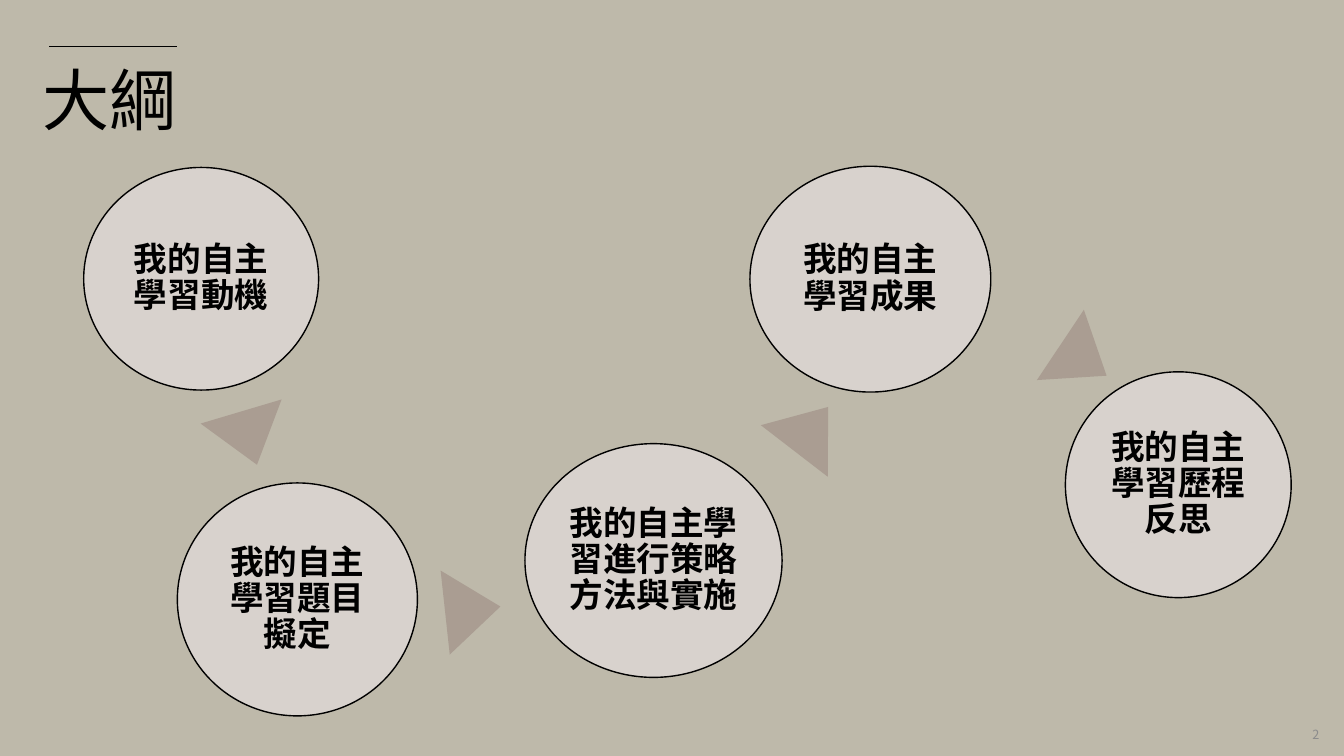
"""Build the outline slide: five topic circles linked by triangle markers."""
from lxml import etree
from pptx import Presentation
from pptx.dml.color import RGBColor
from pptx.enum.shapes import MSO_CONNECTOR, MSO_SHAPE
from pptx.enum.text import MSO_ANCHOR, MSO_AUTO_SIZE, PP_ALIGN
from pptx.oxml.ns import qn
from pptx.util import Cm, Pt

LEFT, CENTER, RIGHT = PP_ALIGN.LEFT, PP_ALIGN.CENTER, PP_ALIGN.RIGHT
TOP, MIDDLE = MSO_ANCHOR.TOP, MSO_ANCHOR.MIDDLE
ELLIPSE, TRIANGLE = MSO_SHAPE.OVAL, MSO_SHAPE.ISOSCELES_TRIANGLE
STRAIGHT = MSO_CONNECTOR.STRAIGHT
NO_AUTOFIT = MSO_AUTO_SIZE.NONE

COLORS = {"background": "BEB9AA", "circle": "D8D2CD", "triangle": "AA9D92",
          "ink": "000000", "number": "8C8C8C"}
TITLE_FONT, TOPIC_FONT = "Noto Sans CJK TC", "Calibri"

TITLE, PAGE_NUMBER = "大綱", "2"
TOPICS = [
    ("我的自主學習動機", (2.11, 4.22, 5.92, 5.61)),
    ("我的自主學習題目擬定", (4.47, 12.17, 6.05, 5.87)),
    ("我的自主學習進行策略方法與實施", (13.23, 11.18, 6.48, 5.89)),
    ("我的自主學習成果", (18.9, 4.19, 6.07, 5.69)),
    ("我的自主學習歷程反思", (26.85, 9.37, 5.69, 5.69)),
]
TRIANGLE_SIZE = (2.13, 1.4)
TRIANGLES = [(5.21, 10.34, 163.4), (10.85, 14.66, 83.8),
             (19.38, 10.11, 37.6), (26.24, 8.38, 123.7)]


def color(name):
    return RGBColor.from_string(COLORS[name])


def write(shape, text, *, font, size, ink="ink", bold=False, align=LEFT,
          anchor=MIDDLE, margins=(0.25, 0.13), spacing=1.0):
    """Put one formatted paragraph into a shape."""
    frame = shape.text_frame
    frame.auto_size = NO_AUTOFIT
    frame.word_wrap = True
    frame.vertical_anchor = anchor
    frame.margin_left = frame.margin_right = Cm(margins[0])
    frame.margin_top = frame.margin_bottom = Cm(margins[1])
    paragraph = frame.paragraphs[0]
    paragraph.alignment = align
    paragraph.line_spacing = spacing
    run = paragraph.add_run()
    run.text = text
    run.font.name = font
    run.font.size = Pt(size)
    run.font.bold = bold
    run.font.color.rgb = color(ink)
    east_asian = etree.SubElement(run.font._element, qn("a:ea"))
    east_asian.set("typeface", font)


def add_filled(slide, kind, box, fill):
    shape = slide.shapes.add_shape(kind, *map(Cm, box))
    shape.shadow.inherit = False
    shape.fill.solid()
    shape.fill.fore_color.rgb = color(fill)
    shape.line.fill.background()
    return shape


def add_heading(slide):
    title = slide.shapes.title
    title.left, title.top, title.width, title.height = map(Cm, (0.81, 1.57, 4.27, 2.31))
    write(title, TITLE, font=TITLE_FONT, size=48, anchor=TOP, spacing=0.9)
    rule = slide.shapes.add_connector(STRAIGHT, *map(Cm, (1.24, 1.17, 4.47, 1.17)))
    rule.line.color.rgb = color("ink")
    rule.line.width = Pt(0.5)
    etree.SubElement(rule._element.spPr, qn("a:effectLst"))


def add_topic(slide, text, box):
    circle = add_filled(slide, ELLIPSE, box, "circle")
    circle.line.color.rgb = color("ink")
    circle.line.width = Pt(1)
    write(circle, text, font=TOPIC_FONT, size=24, bold=True, align=CENTER,
          margins=(0.08, 0.08), spacing=0.9)


def main():
    presentation = Presentation()
    presentation.slide_width, presentation.slide_height = Cm(33.87), Cm(19.05)
    slide = presentation.slides.add_slide(presentation.slide_layouts[5])
    slide.background.fill.solid()
    slide.background.fill.fore_color.rgb = color("background")
    add_heading(slide)
    for text, box in TOPICS:
        add_topic(slide, text, box)
    for left, top, angle in TRIANGLES:
        add_filled(slide, TRIANGLE, (left, top, *TRIANGLE_SIZE), "triangle").rotation = angle
    number = slide.shapes.add_textbox(*map(Cm, (25.88, 18.01, 7.62, 1.02)))
    write(number, PAGE_NUMBER, font=TITLE_FONT, size=9, ink="number", align=RIGHT)
    presentation.save("out.pptx")


if __name__ == "__main__":
    main()
